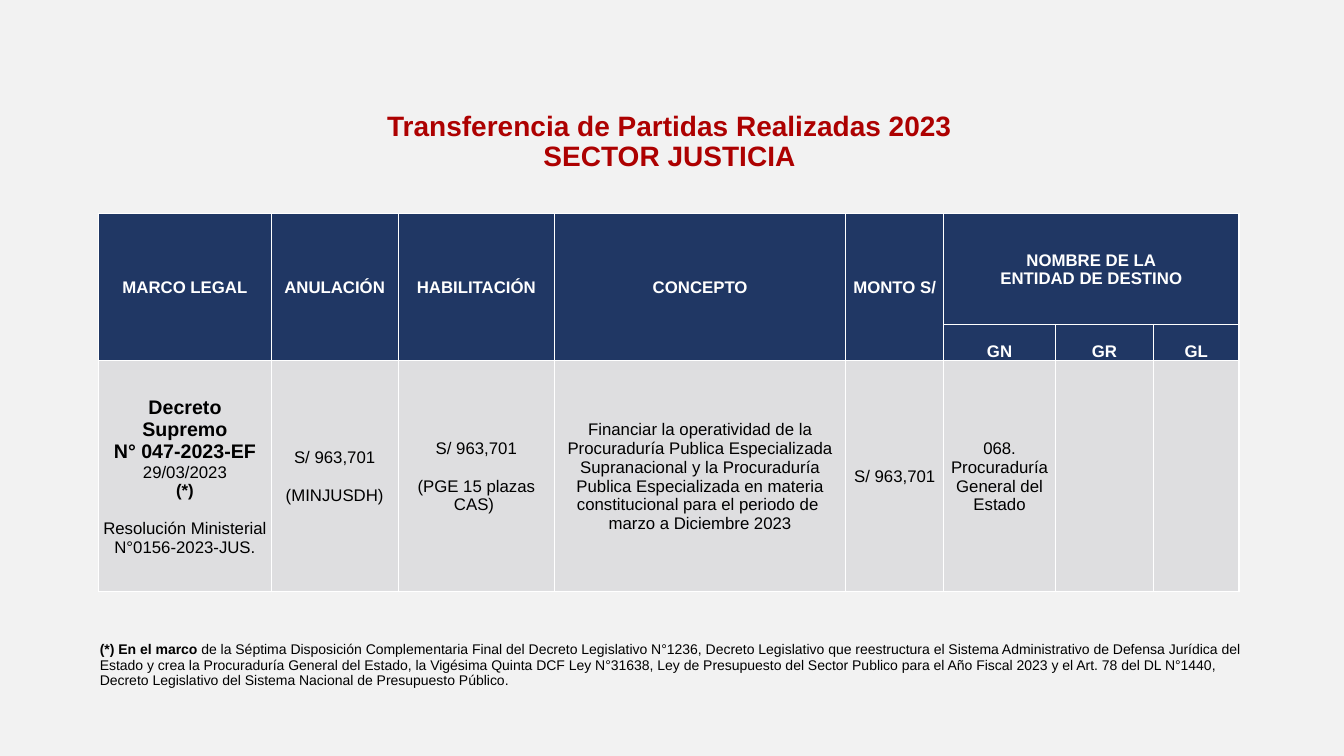
from lxml import etree
from pptx import Presentation
from pptx.dml.color import RGBColor
from pptx.enum.text import MSO_ANCHOR, PP_ALIGN
from pptx.oxml.ns import qn
from pptx.util import Inches, Pt

CENTER, LEFT = PP_ALIGN.CENTER, PP_ALIGN.LEFT
MIDDLE, BOTTOM = MSO_ANCHOR.MIDDLE, MSO_ANCHOR.BOTTOM
PAPER = RGBColor(0xF2, 0xF2, 0xF2)
RED = RGBColor(0xAD, 0x01, 0x01)
NAVY = RGBColor(0x20, 0x37, 0x64)
GREY = RGBColor(0xDE, 0xDE, 0xE0)
WHITE = RGBColor(0xFF, 0xFF, 0xFF)
BLACK = RGBColor(0, 0, 0)
FONT = "Arial"
GAP = 13.5

TITLE = ["Transferencia de Partidas Realizadas 2023", "SECTOR JUSTICIA"]
HEADERS = ["MARCO LEGAL", "ANULACIÓN", "HABILITACIÓN", "CONCEPTO", "MONTO S/"]
DESTINATION = ["NOMBRE DE LA", "ENTIDAD DE DESTINO"]
LEVELS = ["GN", "GR", "GL"]

# Each paragraph: text, size, bold, space before
DECREE = [
    [("Decreto", 14, True, 0), ("Supremo", 14, True, 0),
     ("N° 047-2023-EF", 14, True, 0), ("29/03/2023", 12, False, 0),
     ("(*)", 12, True, 0),
     ("Resolución Ministerial N°0156-2023-JUS.", 12, False, GAP)],
    [("S/ 963,701", 12, False, 0), ("(MINJUSDH)", 12, False, GAP)],
    [("S/ 963,701", 12, False, 0), ("(PGE 15 plazas CAS) ", 12, False, GAP)],
    [("Financiar la operatividad de la Procuraduría Publica Especializada "
      "Supranacional y la Procuraduría Publica Especializada en materia "
      "constitucional para el periodo de ", 12, False, 0),
     ("marzo a Diciembre 2023", 12, False, 0)],
    [("S/ 963,701", 12, False, 0)],
    [("068.", 12, False, 0), ("Procuraduría General del Estado", 12, False, 0)],
    [],
    [],
]
FOOTNOTE = [
    ("(*) En el marco ", True),
    ("de la Séptima Disposición Complementaria Final del Decreto Legislativo "
     "N°1236, Decreto Legislativo que reestructura el Sistema Administrativo de "
     "Defensa Jurídica del Estado y crea la Procuraduría General del Estado, la "
     "Vigésima Quinta DCF Ley N°31638, Ley de Presupuesto del Sector Publico para "
     "el Año Fiscal 2023 y el Art. 78 del DL N°1440, Decreto Legislativo del "
     "Sistema Nacional de Presupuesto Público.", False),
]
COL_WIDTHS = [1.71, 1.26, 1.55, 2.89, 0.97, 1.11, 0.97, 0.85]
ROW_HEIGHTS = [1.1, 0.36, 2.29]
FOOTNOTE_WIDTH = 11.33
FOOTNOTE_HEIGHTS = [0.44, 0.2]
TABLE_LEFT = 0.98


def add_run(p, text, size, bold, color):
    r = p.add_run()
    r.text = text
    r.font.name = FONT
    r.font.size = Pt(size)
    r.font.bold = bold
    r.font.color.rgb = color


def write_cell(cell, paragraphs, color, anchor=MIDDLE):
    cell.vertical_anchor = anchor
    tf = cell.text_frame
    for i, (text, size, bold, before) in enumerate(paragraphs):
        p = tf.add_paragraph() if i else tf.paragraphs[0]
        p.alignment = CENTER
        if before:
            p.space_before = Pt(before)
        add_run(p, text, size, bold, color)


def heading(*lines):
    return [(line, 12, True, 0) for line in lines]


def set_borders(cell, color=None):
    """Give a cell 1 pt borders, or none when there is no color."""
    tc_pr = cell._tc.get_or_add_tcPr()
    for side in ("a:lnL", "a:lnR", "a:lnT", "a:lnB"):
        ln = etree.SubElement(tc_pr, qn(side), w=str(Pt(1)))
        if color is None:
            etree.SubElement(ln, qn("a:noFill"))
        else:
            fill = etree.SubElement(ln, qn("a:solidFill"))
            etree.SubElement(fill, qn("a:srgbClr"), val=str(color))


def add_grid(slide, top, widths, heights):
    """Add a plain table with tight cell margins."""
    frame = slide.shapes.add_table(
        len(heights), len(widths), Inches(TABLE_LEFT), Inches(top),
        Inches(sum(widths)), Inches(sum(heights)))
    table = frame.table
    table.first_row = table.horz_banding = False
    for column, width in zip(table.columns, widths):
        column.width = Inches(width)
    for row, height in zip(table.rows, heights):
        row.height = Inches(height)
    for cell in table.iter_cells():
        cell.margin_left = cell.margin_right = cell.margin_top = Inches(0.01)
        cell.margin_bottom = 0
    return table


def add_title(slide):
    sp = slide.shapes.add_textbox(
        Inches(0.52), Inches(1.18), Inches(12.24), Inches(0.47))
    tf = sp.text_frame
    tf.word_wrap = True
    tf.vertical_anchor = MIDDLE
    p = tf.paragraphs[0]
    p.alignment = CENTER
    p.line_spacing = 0.9
    for i, line in enumerate(TITLE):
        if i:
            p.add_line_break()
        add_run(p, line, 20, True, RED)


def add_transfers(slide):
    table = add_grid(slide, 2.12, COL_WIDTHS, ROW_HEIGHTS)
    for r, row in enumerate(table.rows):
        for cell in row.cells:
            set_borders(cell, WHITE)
            cell.fill.solid()
            cell.fill.fore_color.rgb = NAVY if r < 2 else GREY
    for c, text in enumerate(HEADERS):
        table.cell(0, c).merge(table.cell(1, c))
        write_cell(table.cell(0, c), heading(text), WHITE)
    first = len(HEADERS)
    table.cell(0, first).merge(table.cell(0, first + len(LEVELS) - 1))
    write_cell(table.cell(0, first), heading(*DESTINATION), WHITE)
    for c, text in enumerate(LEVELS, first):
        write_cell(table.cell(1, c), heading(text), WHITE, BOTTOM)
    for c, paragraphs in enumerate(DECREE):
        write_cell(table.cell(2, c), paragraphs, BLACK)


def add_footnote(slide):
    table = add_grid(slide, 6.34, [FOOTNOTE_WIDTH], FOOTNOTE_HEIGHTS)
    for cell in table.iter_cells():
        set_borders(cell)
        cell.fill.background()
        cell.vertical_anchor = MIDDLE
    p = table.cell(0, 0).text_frame.paragraphs[0]
    p.alignment = LEFT
    for text, bold in FOOTNOTE:
        add_run(p, text, 10, bold, BLACK)


def main():
    prs = Presentation()
    prs.slide_width, prs.slide_height = Inches(13.33), Inches(7.5)
    slide = prs.slides.add_slide(prs.slide_layouts[6])
    slide.background.fill.solid()
    slide.background.fill.fore_color.rgb = PAPER
    add_title(slide)
    add_transfers(slide)
    add_footnote(slide)
    prs.save("out.pptx")


if __name__ == "__main__":
    main()
